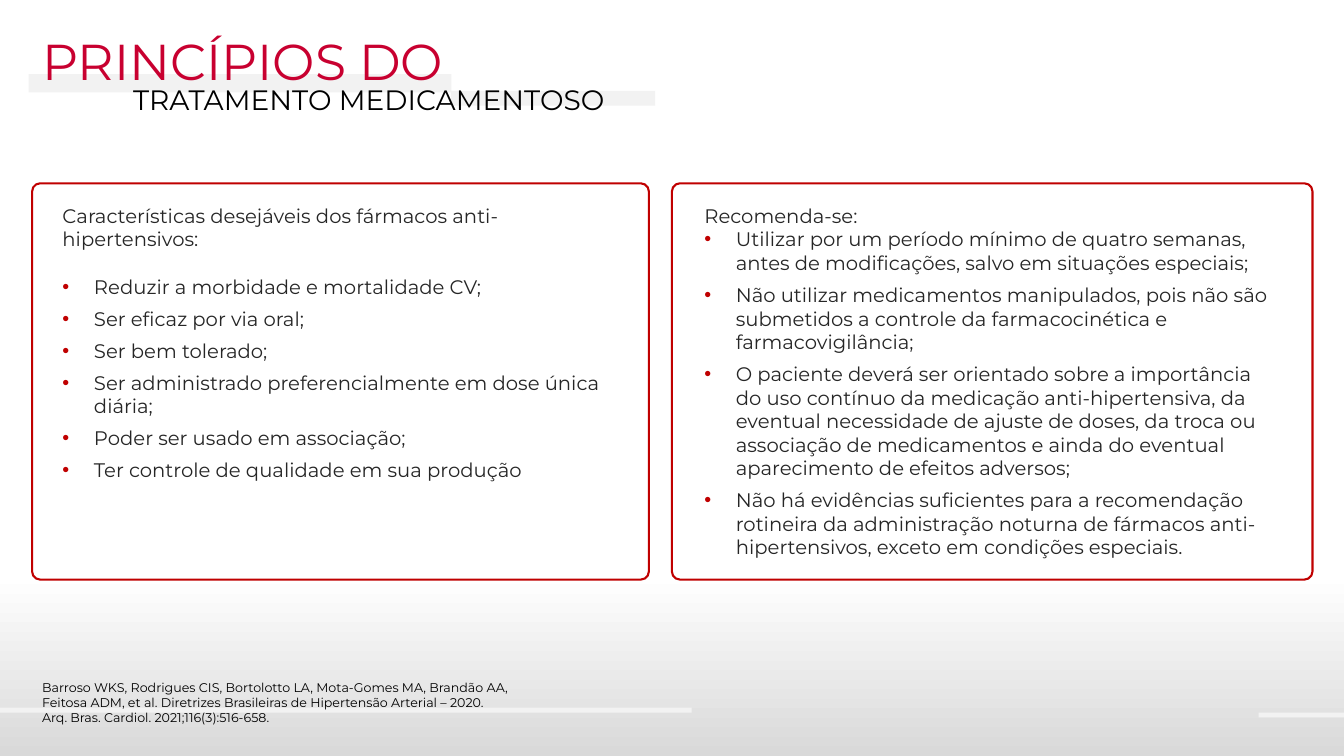
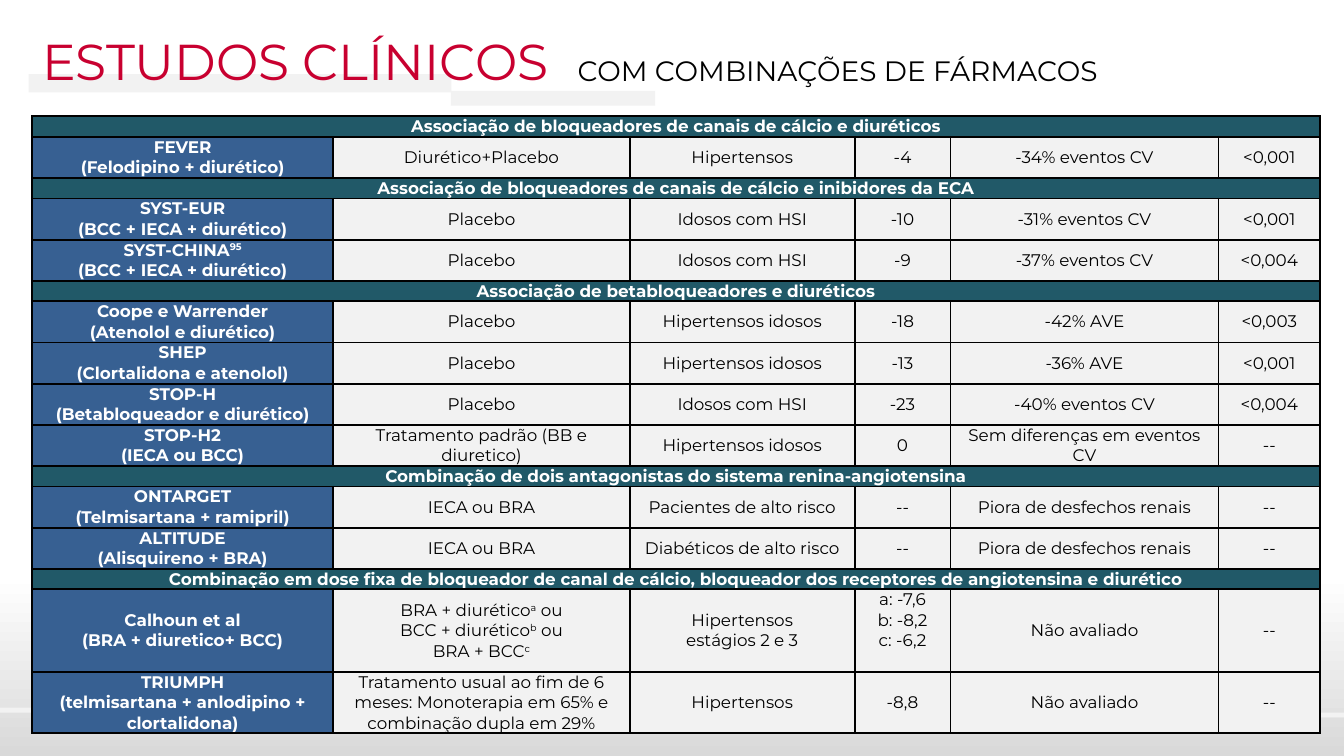
from dataclasses import dataclass
from typing import Any

from lxml.etree import SubElement as Sub
from pptx import Presentation
from pptx.dml.color import RGBColor as Rgb
from pptx.enum.shapes import MSO_SHAPE as Kind
from pptx.enum.text import MSO_ANCHOR as Anchor, PP_ALIGN as Align
from pptx.oxml.ns import qn
from pptx.util import Pt

# Shared look
HUES = {
    "title": "C80030", "line": "C00000", "text": "262626", "black": "000000",
    "white": "FFFFFF", "fade": "D9D9D9", "pale": "F2F2F2",
    "group": "215968", "study": "376092",
}
FACE = "Montserrat"
STYLES: dict[str, tuple[str, dict[str, Any]]] = {
    "title": ("title", {"size": Pt(36)}),
    "sub": ("black", {"size": Pt(20)}),
    "body": ("text", {"size": Pt(14)}),
    "cite": ("black", {"size": Pt(9)}),
    "head": ("white", {"size": Pt(12), "bold": True}),
    "cell": ("black", {"size": Pt(12), "bold": False}),
}
LEFT = 23  # left edge of titles, panels and table
ROW = 14.7  # height of one line of table text


@dataclass
class Box:
    x: float
    y: float
    w: float
    h: float

    def place(self) -> tuple[Pt, Pt, Pt, Pt]:
        return Pt(self.x), Pt(self.y), Pt(self.w), Pt(self.h)


@dataclass
class Panel:
    box: Box
    side: float
    head: str
    gap: float
    items: list[str]


@dataclass
class Study:
    name: str
    cells: list[str]
    lines: int = 2
    top: int = -1  # column whose text starts at the top


BANDS = [
    Box(20.5, 53, 302, 13),
    Box(322, 65, 146, 10.5),
    Box(0, 505.5, 494, 3.5),
    Box(899, 509, 61, 3.5),
]

PANELS = [
    Panel(Box(LEFT, 131, 440.5, 283), 20,
          "Características desejáveis dos fármacos anti-hipertensivos:", 17, [
        "Reduzir a morbidade e mortalidade CV;",
        "Ser eficaz por via oral;",
        "Ser bem tolerado;",
        "Ser administrado preferencialmente em dose única diária;",
        "Poder ser usado em associação;",
        "Ter controle de qualidade em sua produção",
    ]),
    Panel(Box(480, 131, 457.5, 283), 21.5, "Recomenda-se:", 0, [
        "Utilizar por um período mínimo de quatro semanas, antes de "
        "modificações, salvo em situações especiais;",
        "Não utilizar medicamentos manipulados, pois não são submetidos a "
        "controle da farmacocinética e farmacovigilância;",
        "O paciente deverá ser orientado sobre a importância do uso contínuo "
        "da medicação anti-hipertensiva, da eventual necessidade de ajuste de "
        "doses, da troca ou associação de medicamentos e ainda do eventual "
        "aparecimento de efeitos adversos;",
        "Não há evidências suficientes para a recomendação rotineira da "
        "administração noturna de fármacos anti-hipertensivos, exceto em "
        "condições especiais.",
    ]),
]

CITE = """Barroso WKS, Rodrigues CIS, Bortolotto LA, Mota-Gomes MA, Brandão AA,
Feitosa ADM, et al. Diretrizes Brasileiras de Hipertensão Arterial – 2020.
Arq. Bras. Cardiol. 2021;116(3):516-658."""

# Table: text between ^ marks is superscript, a str row is a group heading
COLS = [215, 212, 160.5, 68.5, 191.5, 72.5]
ROWS: list[str | Study] = [
    "Associação de bloqueadores de canais de cálcio e diuréticos",
    Study("FEVER\n(Felodipino + diurético)",
          ["Diurético+Placebo", "Hipertensos", "-4", "-34% eventos CV", "<0,001"]),
    "Associação de bloqueadores de canais de cálcio e inibidores da ECA",
    Study("SYST-EUR\n(BCC + IECA + diurético)",
          ["Placebo", "Idosos com HSI", "-10", "-31% eventos CV", "<0,001"]),
    Study("SYST-CHINA^95^\n(BCC + IECA + diurético)",
          ["Placebo", "Idosos com HSI", "-9", "-37% eventos CV", "<0,004"]),
    "Associação de betabloqueadores e diuréticos",
    Study("Coope e Warrender\n(Atenolol e diurético)",
          ["Placebo", "Hipertensos idosos", "-18", "-42% AVE", "<0,003"]),
    Study("SHEP\n(Clortalidona e atenolol)",
          ["Placebo", "Hipertensos idosos", "-13", "-36% AVE", "<0,001"]),
    Study("STOP-H\n(Betabloqueador e diurético)",
          ["Placebo", "Idosos com HSI", "-23", "-40% eventos CV", "<0,004"]),
    Study("STOP-H2\n(IECA ou BCC)",
          ["Tratamento padrão (BB e diuretico)", "Hipertensos idosos", "0",
           "Sem diferenças em eventos CV", "--"]),
    "Combinação de dois antagonistas do sistema renina-angiotensina",
    Study("ONTARGET\n(Telmisartana + ramipril)",
          ["IECA ou BRA", "Pacientes de alto risco", "--",
           "Piora de desfechos renais", "--"]),
    Study("ALTITUDE\n(Alisquireno + BRA)",
          ["IECA ou BRA", "Diabéticos de alto risco", "--",
           "Piora de desfechos renais", "--"]),
    "Combinação em dose fixa de bloqueador de canal de cálcio, bloqueador dos "
    "receptores de angiotensina e diurético",
    Study("Calhoun et al\n(BRA + diuretico+ BCC)",
          ["BRA + diurético^a^ ou\nBCC + diurético^b^ ou\nBRA + BCC^c^",
           "Hipertensos\nestágios 2 e 3", "a: -7,6\nb: -8,2\nc: -6,2",
           "Não avaliado", "--"], 4, 3),
    Study("TRIUMPH\n(telmisartana + anlodipino + clortalidona)",
          ["Tratamento usual ao fim de 6 meses: Monoterapia em 65% e combinação "
           "dupla em 29%", "Hipertensos", "-8,8", "Não avaliado", "--"], 3),
]


def hue(name: str) -> Rgb:
    return Rgb.from_string(HUES[name])


def apply(item: Any, vals: dict[str, Any]) -> None:
    for key, val in vals.items():
        setattr(item, key, val)


def paint(item: Any, name: str) -> None:
    item.fill.solid()
    item.fill.fore_color.rgb = hue(name)


def write(frame: Any, text: str, style: str, align: Align = Align.LEFT) -> None:
    """Fill a text frame, one paragraph a line."""
    color, vals = STYLES[style]
    for num, line in enumerate(text.split("\n")):
        par = frame.add_paragraph() if num else frame.paragraphs[0]
        par.alignment = align
        for spot, part in enumerate(line.split("^")):
            if not part:
                continue
            run = par.add_run()
            run.text = part
            apply(run.font, {"name": FACE, **vals})
            run.font.color.rgb = hue(color)
            if spot % 2:
                run._r.get_or_add_rPr().set("baseline", "30000")


def label(slide: Any, box: Box, text: str, style: str) -> None:
    frame = slide.shapes.add_textbox(*box.place()).text_frame
    frame.word_wrap = True
    write(frame, text, style)


def base(deck: Any) -> Any:
    """New slide with the fading ground and the pale bands."""
    slide = deck.slides.add_slide(deck.slide_layouts[6])
    fill = slide.background.fill
    fill.gradient()
    fill.gradient_angle = 270
    for stop, spot, name in zip(fill.gradient_stops, (0.76, 1), ("white", "fade")):
        stop.position = spot
        stop.color.rgb = hue(name)
    for band in BANDS:
        bar = slide.shapes.add_shape(Kind.RECTANGLE, *band.place())
        bar.shadow.inherit = False
        bar.line.fill.background()
        paint(bar, "pale")
    return slide


def title(slide: Any, main: str, sub: str, x: float, y: float) -> None:
    label(slide, Box(LEFT, 18, 825, 51), main, "title")
    label(slide, Box(x, y, 412, 32), sub, "sub")


def bullet(par: Any) -> None:
    props = par._p.get_or_add_pPr()
    props.set("marL", str(Pt(22.5)))
    props.set("indent", str(-Pt(22.5)))
    Sub(Sub(props, qn("a:buClr")), qn("a:srgbClr"), val=HUES["line"])
    Sub(props, qn("a:buFont"), typeface="Arial")
    Sub(props, qn("a:buChar"), char="•")
    par.space_after = Pt(6)


def panel(slide: Any, spec: Panel) -> None:
    card = slide.shapes.add_shape(Kind.ROUNDED_RECTANGLE, *spec.box.place())
    card.adjustments[0] = 0.02
    card.shadow.inherit = False
    card.fill.background()
    card.line.color.rgb = hue("line")
    card.line.width = Pt(1.5)
    frame = card.text_frame
    apply(frame, {
        "word_wrap": True, "vertical_anchor": Anchor.TOP, "margin_top": Pt(13),
        "margin_left": Pt(spec.side), "margin_right": Pt(spec.side),
    })
    write(frame, "\n".join([spec.head, *spec.items]), "body")
    first, *rest = frame.paragraphs
    first.space_after = Pt(spec.gap)
    for par in rest:
        bullet(par)


def dress(cell: Any, fill: str) -> None:
    """Borders, then fill and margins of a table cell."""
    props = cell._tc.get_or_add_tcPr()
    for side in ("lnL", "lnR", "lnT", "lnB"):
        line = Sub(props, qn(f"a:{side}"), w=str(Pt(1.5)))
        Sub(Sub(line, qn("a:solidFill")), qn("a:srgbClr"), val=HUES["black"])
    paint(cell, fill)
    apply(cell, {
        "margin_left": Pt(5.5), "margin_right": Pt(5.5), "margin_top": 0,
        "margin_bottom": 0, "vertical_anchor": Anchor.MIDDLE,
    })


def chart(slide: Any) -> None:
    """Table of the studies, grouped by drug class."""
    highs = [ROW * (1 if isinstance(row, str) else row.lines) for row in ROWS]
    box = Box(LEFT, 83, sum(COLS), sum(highs))
    grid = slide.shapes.add_table(len(ROWS), len(COLS), *box.place()).table
    apply(grid, {"first_row": False, "horz_banding": False})
    for col, wide in zip(grid.columns, COLS):
        col.width = Pt(wide)
    for num, (row, high) in enumerate(zip(ROWS, highs)):
        grid.rows[num].height = Pt(high)
        cells = [grid.cell(num, col) for col in range(len(COLS))]
        if isinstance(row, str):
            for cell in cells:
                dress(cell, "group")
            cells[0].merge(cells[-1])
            write(cells[0].text_frame, row, "head", Align.CENTER)
            continue
        for col, (cell, text) in enumerate(zip(cells, [row.name, *row.cells])):
            dress(cell, "pale" if col else "study")
            write(cell.text_frame, text, "cell" if col else "head", Align.CENTER)
            if col == row.top:
                cell.vertical_anchor = Anchor.TOP


def main() -> None:
    deck = Presentation()
    apply(deck, {"slide_width": Pt(960), "slide_height": Pt(540)})

    # Principles
    slide = base(deck)
    title(slide, "PRINCÍPIOS DO", "TRATAMENTO MEDICAMENTOSO", 88, 55.5)
    for spec in PANELS:
        panel(slide, spec)
    label(slide, Box(LEFT, 482, 482, 40), CITE, "cite")

    # Clinical studies
    slide = base(deck)
    chart(slide)
    title(slide, "ESTUDOS CLÍNICOS", "COM COMBINAÇÕES DE FÁRMACOS", 405.5, 34.5)

    deck.save("out.pptx")


if __name__ == "__main__":
    main()
